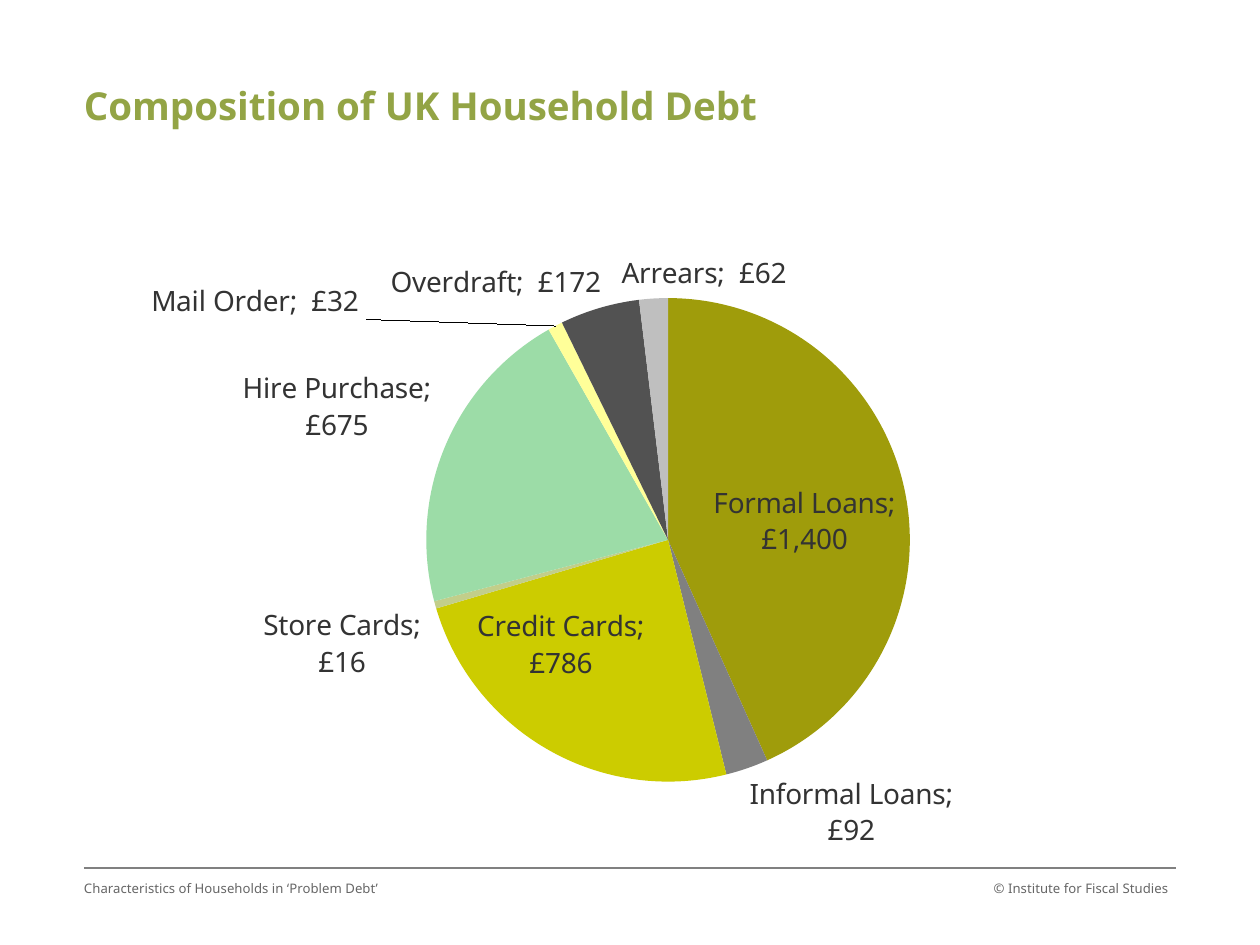
import pptx
import pptx.chart.data
import pptx.dml.color
import pptx.enum.chart
import pptx.enum.shapes
import pptx.enum.text
import pptx.oxml
import pptx.oxml.ns
import pptx.util
from lxml import etree

Pt = pptx.util.Pt
FONT = "Noto Sans"
LEFT, WIDTH = 48, 624


def color(hex_code):
    return pptx.dml.color.RGBColor.from_string(hex_code)


def format_text(shape, size, hex_code, bold=False):
    frame = shape.text_frame
    frame.word_wrap = True
    frame.margin_left = frame.margin_right = frame.margin_top = frame.margin_bottom = 0
    frame.vertical_anchor = pptx.enum.text.MSO_ANCHOR.TOP
    font = frame.paragraphs[0].runs[0].font
    font.name, font.size, font.bold = FONT, Pt(size), bold
    font.color.rgb = color(hex_code)


presentation = pptx.Presentation()
presentation.slide_width, presentation.slide_height = Pt(720), Pt(540)
slide = presentation.slides.add_slide(presentation.slide_layouts[5])

# Title
title = slide.shapes.title
title.left, title.top, title.width, title.height = Pt(LEFT), Pt(47), Pt(516), Pt(32)
title.text_frame.text = "Composition of UK Household Debt"
format_text(title, 22, "93A445", bold=True)
title.text_frame.paragraphs[0].alignment = pptx.enum.text.PP_ALIGN.LEFT

# Footer rule
rule = slide.shapes.add_connector(
    pptx.enum.shapes.MSO_CONNECTOR.STRAIGHT, Pt(LEFT), Pt(496), Pt(LEFT + WIDTH), Pt(496))
rule.line.color.rgb = color("808080")
rule.line.width = Pt(0.75)
etree.SubElement(rule._element.spPr, pptx.oxml.ns.qn("a:effectLst"))

# Footer texts
align = pptx.enum.text.PP_ALIGN
for text, left, width, alignment in [
    ("Characteristics of Households in ‘Problem Debt’", LEFT, 228, align.LEFT),
    ("© Institute for Fiscal Studies", 547, 120.5, align.RIGHT),
]:
    footer = slide.shapes.add_textbox(Pt(left), Pt(503), Pt(width), Pt(29))
    footer.text_frame.text = text
    format_text(footer, 7.5, "666666")
    footer.text_frame.paragraphs[0].alignment = alignment

# Debt types: name, pounds, colour, label position, label shift as share of the chart
debts = [
    ("Formal Loans", 1400, "9F9C0B", "ctr", (0.02, 0.01)),
    ("Informal Loans", 92, "808080", "outEnd", None),
    ("Credit Cards", 786, "CCCC00", "ctr", (-0.04, 0)),
    ("Store Cards", 16, "C2CE8A", "outEnd", None),
    ("Hire Purchase", 675, "9CDCA7", "outEnd", None),
    ("Mail Order", 32, "FFFF99", "outEnd", (-0.17, 0)),
    ("Overdraft", 172, "525252", "outEnd", (0.01, 0)),
    ("Arrears", 62, "BFBFBF", "outEnd", (0.05, 0)),
]

# Pie chart
chart_data = pptx.chart.data.CategoryChartData()
chart_data.categories = [debt[0] for debt in debts]
chart_data.add_series("Series 1", [debt[1] for debt in debts])
chart = slide.shapes.add_chart(
    pptx.enum.chart.XL_CHART_TYPE.PIE, Pt(LEFT), Pt(134), Pt(WIDTH), Pt(363.6), chart_data).chart
chart.has_legend = False
chart.has_title = False
chart.font.name, chart.font.size = FONT, Pt(16)
chart.font.color.rgb = color("333333")
plot = chart.plots[0]
plot.vary_by_categories = True
series = plot.series[0]
for index, debt in enumerate(debts):
    fill = series.points[index].format.fill
    fill.solid()
    fill.fore_color.rgb = color(debt[2])

# Pie position inside the chart
plot_area = chart._chartSpace.chart.plotArea
for old_layout in plot_area.findall(pptx.oxml.ns.qn("c:layout")):
    plot_area.remove(old_layout)
plot_area.insert(0, pptx.oxml.parse_xml(
    f'<c:layout {pptx.oxml.ns.nsdecls("c")}><c:manualLayout><c:layoutTarget val="inner"/>'
    '<c:xMode val="edge"/><c:yMode val="edge"/><c:x val="0.31"/><c:y val="0.1"/>'
    '<c:w val="0.45"/><c:h val="0.76"/></c:manualLayout></c:layout>'))

# Labels with name and value
number_format = '<c:numFmt formatCode="_-[$£-809]* #,##0_-" sourceLinked="0"/>'
shown = ('<c:showLegendKey val="0"/><c:showVal val="1"/><c:showCatName val="1"/>'
         '<c:showSerName val="0"/><c:showPercent val="0"/><c:showBubbleSize val="0"/>'
         '<c:separator>; </c:separator>')
labels = ""
for index, (name, pounds, hex_code, position, shift) in enumerate(debts):
    layout = ""
    if shift:
        layout = (f'<c:layout><c:manualLayout><c:x val="{shift[0]}"/>'
                  f'<c:y val="{shift[1]}"/></c:manualLayout></c:layout>')
    labels += (f'<c:dLbl><c:idx val="{index}"/>{layout}{number_format}'
               f'<c:dLblPos val="{position}"/>{shown}</c:dLbl>')
series.data_labels._element.getparent().replace(
    series.data_labels._element,
    pptx.oxml.parse_xml(
        f'<c:dLbls {pptx.oxml.ns.nsdecls("c")}>{labels}{number_format}'
        f'<c:dLblPos val="outEnd"/>{shown}<c:showLeaderLines val="1"/></c:dLbls>'))

presentation.save("out.pptx")
